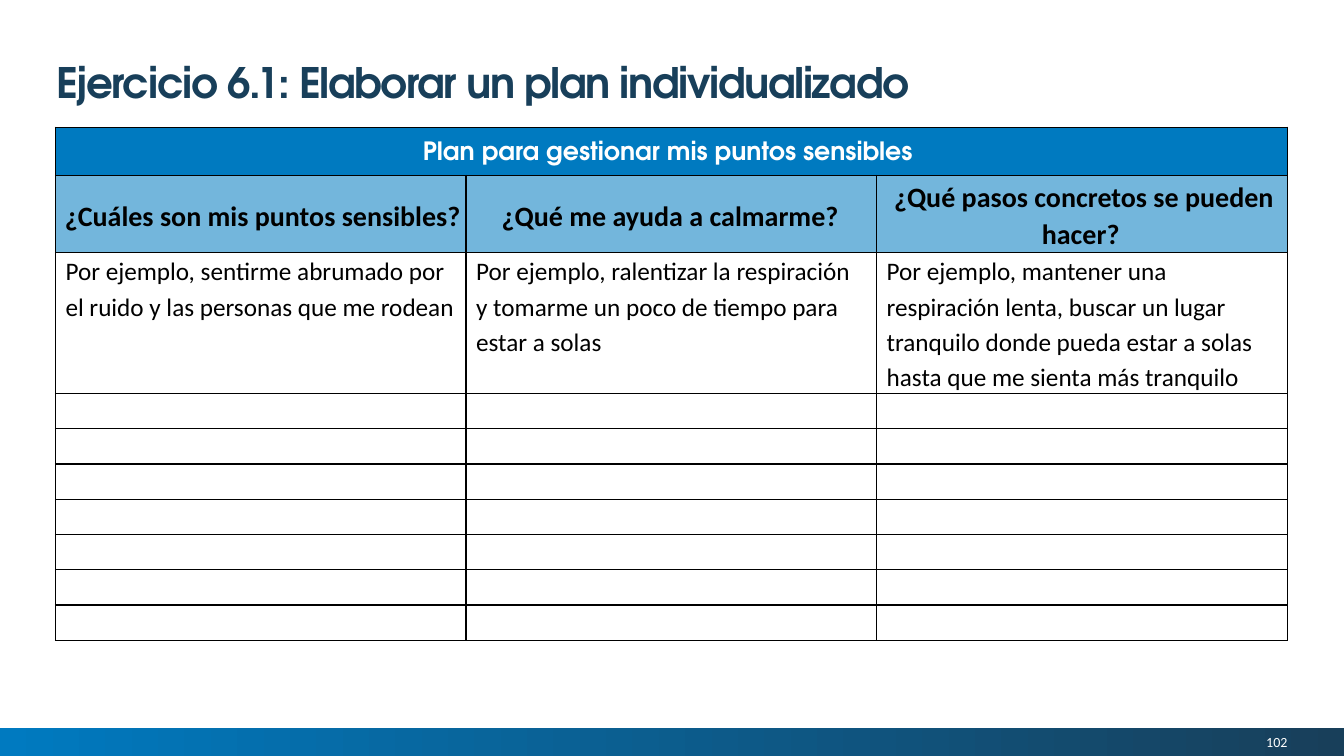
from lxml.etree import SubElement
from pptx import Presentation
from pptx.dml.color import RGBColor
from pptx.enum.shapes import MSO_SHAPE
from pptx.enum.text import MSO_ANCHOR, PP_ALIGN
from pptx.oxml.ns import qn
from pptx.util import Pt

BLUE = RGBColor(0x00, 0x7A, 0xC0)
NAVY = RGBColor(0x18, 0x3F, 0x5A)
SKY = RGBColor(0x73, 0xB6, 0xDC)
WHITE = RGBColor(0xFF, 0xFF, 0xFF)
BLACK = RGBColor(0x00, 0x00, 0x00)
HEADING_FONT = "TeX Gyre Adventor"
BODY_FONT = "Calibri"

QUESTIONS = [
    "¿Cuáles son mis puntos sensibles? ",
    "¿Qué me ayuda a calmarme? ",
    "¿Qué pasos concretos se pueden hacer? ",
]
EXAMPLES = [
    "Por ejemplo, sentirme abrumado por el ruido y las personas que me rodean",
    "Por ejemplo, ralentizar la respiración y tomarme un poco de tiempo para estar a solas",
    "Por ejemplo, mantener una respiración lenta, buscar un lugar tranquilo donde pueda "
    "estar a solas hasta que me sienta más tranquilo",
]
EMPTY_ROWS = 7
ROW_HEIGHTS = [34.3, 55, 100.8] + [25.2] * EMPTY_ROWS
COLUMN_WIDTH = 293.3


def add_run(p, text, size, color, font=BODY_FONT, bold=False):
    r = p.add_run()
    r.text = text
    r.font.size = Pt(size)
    r.font.name = font
    r.font.bold = bold
    r.font.color.rgb = color
    return r


def set_margins(box, left, top, right, bottom):
    box.margin_left, box.margin_top = Pt(left), Pt(top)
    box.margin_right, box.margin_bottom = Pt(right), Pt(bottom)


def add_title(s, text):
    tf = s.shapes.add_textbox(Pt(33.1), Pt(39.6), Pt(771), Pt(33.8)).text_frame
    tf.word_wrap = True
    p = tf.paragraphs[0]
    p.line_spacing = Pt(33)
    r = add_run(p, text, 30, NAVY, HEADING_FONT, True)
    r.font._element.set("spc", "-100")


def add_footer(s, number):
    bar = s.shapes.add_shape(MSO_SHAPE.RECTANGLE, Pt(0), Pt(520), Pt(960), Pt(20))
    bar.shadow.inherit = False
    bar.line.fill.background()
    bar.fill.gradient()
    bar.fill.gradient_angle = 0
    for stop, color, position in zip(bar.fill.gradient_stops, (BLUE, NAVY), (0, 1)):
        stop.color.rgb = color
        stop.position = position
    tf = s.shapes.add_textbox(Pt(790), Pt(521.3), Pt(129.6), Pt(17.3)).text_frame
    tf.word_wrap = True
    tf.vertical_anchor = MSO_ANCHOR.MIDDLE
    set_margins(tf, 0, 0, 0, 0)
    p = tf.paragraphs[0]
    p.alignment = PP_ALIGN.RIGHT
    add_run(p, number, 10, WHITE)


def add_borders(cell):
    tcPr = cell._tc.get_or_add_tcPr()
    for side in ("a:lnL", "a:lnR", "a:lnT", "a:lnB"):
        ln = SubElement(tcPr, qn(side), w=str(Pt(1)))
        fill = SubElement(ln, qn("a:solidFill"))
        SubElement(fill, qn("a:srgbClr"), val=str(BLACK))


def fill_cell(cell, color):
    cell.fill.solid()
    cell.fill.fore_color.rgb = color


def add_banner(cell, text):
    fill_cell(cell, BLUE)
    cell.vertical_anchor = MSO_ANCHOR.MIDDLE
    p = cell.text_frame.paragraphs[0]
    p.alignment = PP_ALIGN.CENTER
    p.line_spacing = 1.15
    add_run(p, text, 18, WHITE, HEADING_FONT, True)


def add_question(cell, text, anchor):
    fill_cell(cell, SKY)
    cell.vertical_anchor = anchor
    set_margins(cell, 5.8, 2.2, 2.9, 0)
    p = cell.text_frame.paragraphs[0]
    p.alignment = PP_ALIGN.CENTER
    p.line_spacing = 1.07
    p.space_after = Pt(8)
    add_run(p, text, 20, BLACK, bold=True)


def add_example(cell, text):
    p = cell.text_frame.paragraphs[0]
    p.line_spacing = 1.15
    add_run(p, text, 18, BLACK)


def add_plan(s):
    frame = s.shapes.add_table(len(ROW_HEIGHTS), len(QUESTIONS), Pt(39.6), Pt(90.9),
                               Pt(COLUMN_WIDTH * len(QUESTIONS)), Pt(sum(ROW_HEIGHTS)))
    table = frame.table
    table.first_row = False
    table.horz_banding = False
    for column in table.columns:
        column.width = Pt(COLUMN_WIDTH)
    for row, height in zip(table.rows, ROW_HEIGHTS):
        row.height = Pt(height)
    for cell in table.iter_cells():
        add_borders(cell)
        cell.fill.background()
        set_margins(cell, 7.2, 0, 7.2, 0)
    table.cell(0, 0).merge(table.cell(0, len(QUESTIONS) - 1))
    add_banner(table.cell(0, 0), "Plan para gestionar mis puntos sensibles ")
    anchors = (MSO_ANCHOR.MIDDLE, MSO_ANCHOR.MIDDLE, MSO_ANCHOR.TOP)
    for i, (question, example, anchor) in enumerate(zip(QUESTIONS, EXAMPLES, anchors)):
        add_question(table.cell(1, i), question, anchor)
        add_example(table.cell(2, i), example)


def main():
    prs = Presentation()
    prs.slide_width, prs.slide_height = Pt(960), Pt(540)
    s = prs.slides.add_slide(prs.slide_layouts[6])
    add_footer(s, "102")
    add_plan(s)
    add_title(s, "Ejercicio 6.1: Elaborar un plan individualizado")
    prs.save("out.pptx")


if __name__ == "__main__":
    main()
